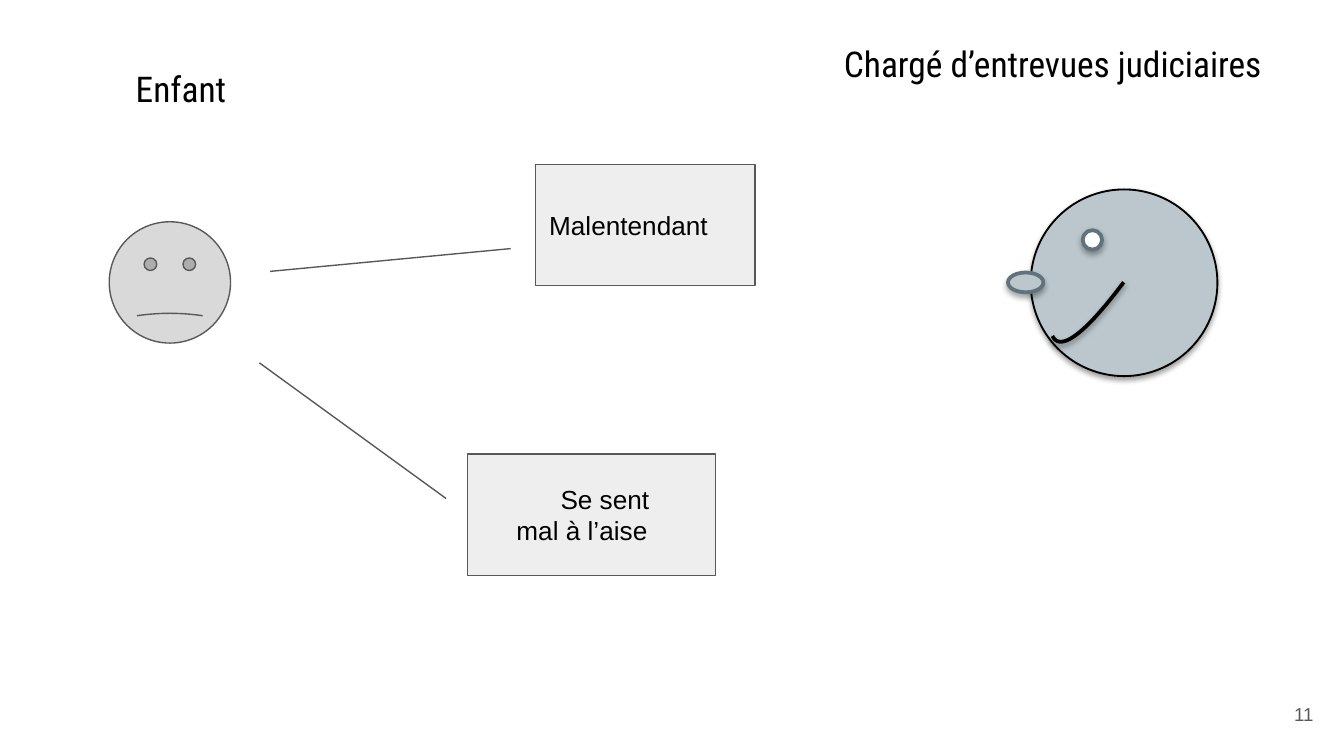
from pptx import Presentation
from pptx.dml.color import RGBColor
from pptx.enum.shapes import MSO_CONNECTOR, MSO_SHAPE
from pptx.enum.text import MSO_ANCHOR, PP_ALIGN
from pptx.oxml.ns import qn
from pptx.util import Pt
from lxml import etree

OVAL, RECT, FACE = MSO_SHAPE.OVAL, MSO_SHAPE.RECTANGLE, MSO_SHAPE.SMILEY_FACE
LINE = MSO_CONNECTOR.STRAIGHT
TOP, MID = MSO_ANCHOR.TOP, MSO_ANCHOR.MIDDLE
LEFT, RIGHT = PP_ALIGN.LEFT, PP_ALIGN.RIGHT
BLACK, GRAY, SLATE, STEEL = "000000", "585858", "BBC7CD", "60737D"
HEAD = {"name": "Roboto Condensed", "size": Pt(19)}
BODY = {"name": "Arial", "size": Pt(14)}
NOTE = {"name": "Arial", "size": Pt(10)}


def rgb(code):
    return RGBColor.from_string(code)


def outline(shape, color, width):
    shape.line.color.rgb = rgb(color)
    shape.line.width = Pt(width)


def shade(shape, dist, alpha):
    """Give the shape a soft shadow straight below it."""
    shape.shadow.inherit = False
    effects = shape._element.spPr.find(qn("a:effectLst"))
    drop = etree.SubElement(effects, qn("a:outerShdw"), blurRad=str(Pt(3)),
                            dist=str(Pt(dist)), dir="5400000", rotWithShape="0")
    tint = etree.SubElement(drop, qn("a:srgbClr"), val=BLACK)
    etree.SubElement(tint, qn("a:alpha"), val=str(alpha * 1000))


def add_form(slide, kind, box, fill, color, width):
    shape = slide.shapes.add_shape(kind, *map(Pt, box))
    shape.shadow.inherit = False
    shape.fill.solid()
    shape.fill.fore_color.rgb = rgb(fill)
    outline(shape, color, width)
    return shape


def write(shape, lines, style, color=BLACK, anchor=MID, align=LEFT, top=7.2):
    """Fill a shape with (text, left indent) lines."""
    frame = shape.text_frame
    form = {"word_wrap": True, "vertical_anchor": anchor, "margin_left": Pt(7.2),
            "margin_right": Pt(7.2), "margin_top": Pt(top), "margin_bottom": Pt(7.2)}
    for key, value in form.items():
        setattr(frame, key, value)
    for i, (text, indent) in enumerate(lines):
        para = frame.add_paragraph() if i else frame.paragraphs[0]
        para.alignment = align
        para._p.get_or_add_pPr().set("marL", str(Pt(indent)))
        run = para.add_run()
        run.text = text
        for key, value in style.items():
            setattr(run.font, key, value)
        run.font.color.rgb = rgb(color)


def add_text(slide, box, lines, style, **form):
    write(slide.shapes.add_textbox(*map(Pt, box)), lines, style, **form)


def add_line(slide, *ends):
    line = slide.shapes.add_connector(LINE, *map(Pt, ends))
    outline(line, GRAY, 0.75)
    etree.SubElement(line._element.spPr, qn("a:effectLst"))


def add_curve(slide, ends, steps=24):
    """Draw a cubic curve through four control points."""
    dots = []
    for i in range(steps + 1):
        t = i / steps
        parts = ((1 - t) ** 3, 3 * t * (1 - t) ** 2, 3 * t * t * (1 - t), t ** 3)
        dots.append(tuple(Pt(sum(w * v for w, v in zip(parts, axis)))
                          for axis in zip(*ends)))
    pen = slide.shapes.build_freeform(*dots[0])
    pen.add_line_segments(dots[1:], close=False)
    curve = pen.convert_to_shape()
    curve.fill.background()
    outline(curve, BLACK, 2)
    shade(curve, 1.6, 38)


def main():
    deck = Presentation()
    deck.slide_width, deck.slide_height = Pt(720), Pt(405)
    slide = deck.slides.add_slide(deck.slide_layouts[6])

    # Headings
    add_text(slide, (373, 5, 353.5, 127.5), [("Chargé d’entrevues judiciaires", 72)],
             HEAD, anchor=TOP, top=20)
    add_text(slide, (22.3, 28.8, 495.4, 37.4), [("Enfant", 43.3)], HEAD, anchor=TOP)

    # Child
    face = add_form(slide, FACE, (58.5, 118.8, 65, 65), "D9D9D9", GRAY, 0.75)
    face.adjustments[0] = -0.01
    add_line(slide, 139, 194.4, 239, 267.1)
    add_line(slide, 144.7, 145.4, 273.6, 133.2)

    # Interviewer: head, eye, smile, nose
    head = add_form(slide, OVAL, (552.2, 101.5, 100, 100), SLATE, BLACK, 1)
    shade(head, 1.6, 38)
    eye = add_form(slide, OVAL, (580, 123.3, 10.4, 10.4), "FFFFFF", STEEL, 2)
    shade(eye, 1.8, 35)
    add_curve(slide, [(602, 151.2), (581, 179.3), (568, 188.6), (563.8, 180)])
    nose = add_form(slide, OVAL, (540, 146, 19, 10.6), SLATE, STEEL, 2)
    shade(nose, 1.8, 35)

    # Difficulties
    for box, lines in (
        ((286.8, 88, 117.8, 65), [("Malentendant", 0.3)]),
        ((250.4, 243.3, 133, 65), [("Se sent", 42.8), ("mal à l’aise", 19.2)]),
    ):
        write(add_form(slide, RECT, box, "EEEEEE", GRAY, 0.75), lines, BODY)

    # Page number
    add_text(slide, (684.7, 370, 26, 25.2), [("11", 0)], NOTE, color=GRAY, align=RIGHT)

    deck.save("out.pptx")


if __name__ == "__main__":
    main()
